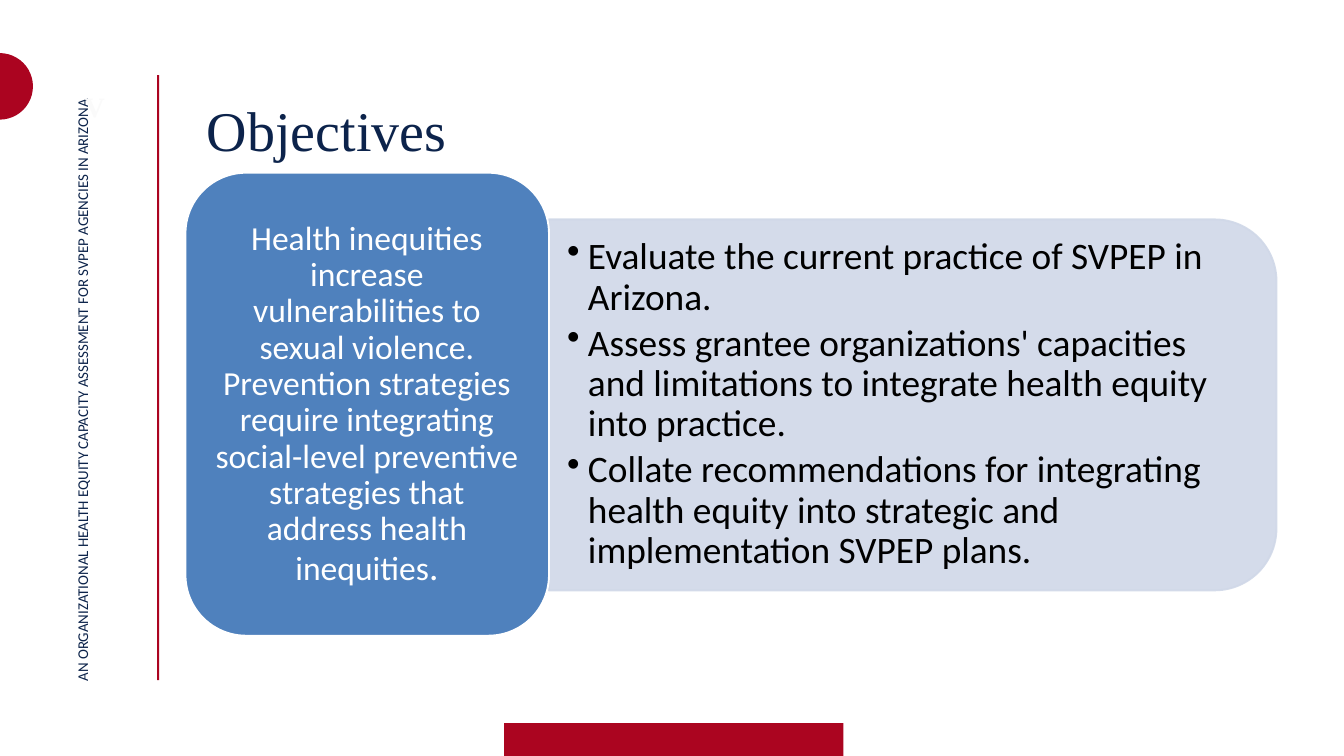
from lxml import etree
from pptx import Presentation
from pptx import util as u
from pptx.dml.color import RGBColor
from pptx.enum import shapes, text
from pptx.oxml import ns

COLORS = {
    "red": "AB0420",
    "bright_red": "AB0520",
    "navy": "0C234B",
    "caption": "0C234A",
    "faint": "FAFAFA",
    "blue": "4F81BD",
    "pale": "D0D8E8",
    "white": "FFFFFF",
    "black": "000000",
}

STATEMENT = (
    "Health inequities increase vulnerabilities to sexual violence. "
    "Prevention strategies require integrating social-level preventive "
    "strategies that address health inequities"
)
OBJECTIVES = [
    "Evaluate the current practice of SVPEP in Arizona.",
    "Assess grantee organizations' capacities and limitations to integrate "
    "health equity into practice.",
    "Collate recommendations for integrating health equity into strategic "
    "and implementation SVPEP plans.",
]


def rgb(name):
    return RGBColor.from_string(COLORS[name])


def add_alpha(fill_parent, percent):
    for color in fill_parent.iter(ns.qn("a:srgbClr")):
        etree.SubElement(color, ns.qn("a:alpha"), val=str(percent * 1000))


def add_shape(s, kind, box, fill, line=None, rotation=0, alpha=None):
    sp = s.shapes.add_shape(kind, *map(u.Inches, box))
    sp.shadow.inherit = False
    sp.rotation = rotation
    sp.fill.solid()
    sp.fill.fore_color.rgb = rgb(fill)
    if line:
        sp.line.color.rgb = rgb(line)
        sp.line.width = u.Pt(2)
    else:
        sp.line.fill.background()
    if alpha:
        add_alpha(sp.element.spPr, alpha)
    return sp


def add_bullet(p, indent):
    pPr = p._p.get_or_add_pPr()
    pPr.set("marL", str(u.Inches(indent)))
    pPr.set("indent", str(-u.Inches(indent)))
    etree.SubElement(pPr, ns.qn("a:buChar"), char="•")


def add_text(s, box, paragraphs, size, color, font="Calibri", bold=False,
             align=None, anchor=text.MSO_ANCHOR.TOP, insets=(0, 0, 0, 0),
             line_spacing=None, after=None, bullet=None, vert=None,
             wrap=True, spacing=None):
    sp = s.shapes.add_textbox(*map(u.Inches, box))
    tf = sp.text_frame
    tf.word_wrap = wrap
    tf.vertical_anchor = anchor
    tf.margin_left, tf.margin_top, tf.margin_right, tf.margin_bottom = map(
        u.Inches, insets)
    if vert:
        tf._txBody.bodyPr.set("vert", vert)
    for i, runs in enumerate(paragraphs):
        p = tf.paragraphs[0] if i == 0 else tf.add_paragraph()
        if bullet:
            add_bullet(p, bullet)
        p.alignment = align
        p.line_spacing = line_spacing
        p.space_after = after
        for words, run_size in runs:
            r = p.add_run()
            r.text = words
            r.font.name = font
            r.font.size = u.Pt(run_size or size)
            r.font.bold = bold
            r.font.color.rgb = rgb(color)
            if spacing:
                r.font._element.set("spc", str(spacing))
    return sp


def add_frame(s):
    kind = shapes.MSO_SHAPE
    add_shape(s, kind.RECTANGLE, (2.34, 1.12, 0.03, 9), "red")
    add_shape(s, kind.RECTANGLE, (7.5, 10.76, 5.05, 0.54), "bright_red")
    add_text(s, (1.09, 1.12, 0.33, 9.02),
             [[("AN ORGANIZATIONAL HEALTH EQUITY CAPACITY ASSESSMENT "
                "FOR SVPEP AGENCIES IN ARIZONA", None)]],
             16, "caption", insets=(0, 0.01, 0, 0), vert="vert270")
    add_shape(s, kind.OVAL, (-0.5, 0.79, 0.99, 0.99), "red")


def add_objectives(s):
    kind = shapes.MSO_SHAPE
    add_shape(s, kind.ROUND_2_SAME_RECTANGLE, (10.82, 0.61, 5.52, 10.83),
              "pale", line="pale", rotation=90, alpha=90)
    add_text(s, (8.17, 3.53, 10.56, 4.98),
             [[(words, None)] for words in OBJECTIVES], 40, "black",
             anchor=text.MSO_ANCHOR.MIDDLE, insets=(0.27, 0.14, 0.27, 0.14),
             line_spacing=0.9, after=u.Pt(6), bullet=0.31)


def add_statement(s):
    add_shape(s, shapes.MSO_SHAPE.ROUNDED_RECTANGLE,
              (2.76, 2.57, 5.41, 6.89), "blue", line="white")
    add_text(s, (3.02, 2.84, 4.88, 6.37), [[(STATEMENT, None), (".", 40)]],
             36, "white", align=text.PP_ALIGN.CENTER,
             anchor=text.MSO_ANCHOR.MIDDLE, insets=(0.15, 0.07, 0.15, 0.07),
             line_spacing=0.9)


def main():
    prs = Presentation()
    prs.slide_width, prs.slide_height = u.Inches(20), u.Inches(11.25)
    s = prs.slides.add_slide(prs.slide_layouts[6])
    add_frame(s)
    add_text(s, (3.08, 1.14, 14.89, 1.42), [[("Objectives", None)]], 60,
             "navy", font="Times New Roman", insets=(0, 0.17, 0, 0),
             line_spacing=u.Pt(80))
    add_text(s, (1.26, 1.32, 0.3, 0.53), [[("V", None)]], 30, "faint",
             font="Times New Roman", bold=True, insets=(0, 0.01, 0, 0),
             wrap=False, spacing=-190)
    add_objectives(s)
    add_statement(s)
    prs.save("out.pptx")


if __name__ == "__main__":
    main()
